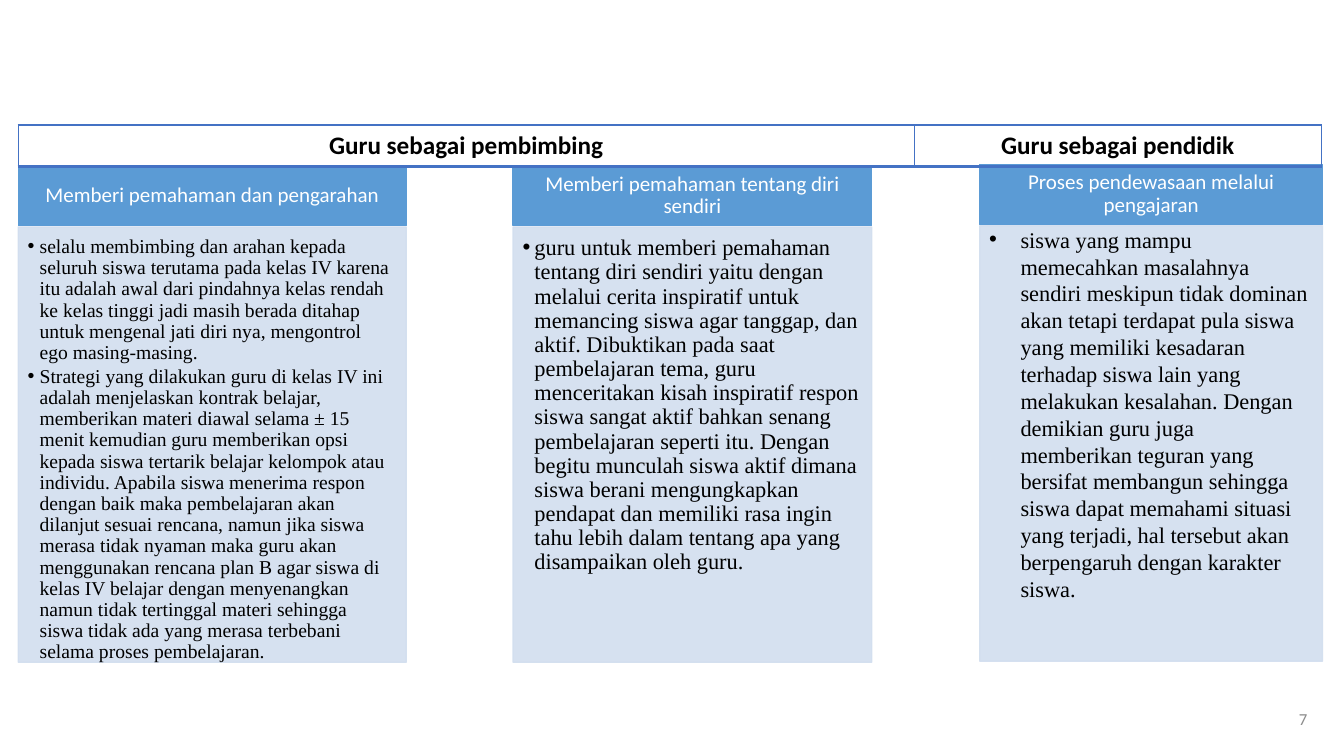
from lxml import etree
from pptx import Presentation
from pptx.dml.color import RGBColor
from pptx.enum.shapes import MSO_SHAPE
from pptx.enum.text import MSO_ANCHOR, PP_ALIGN
from pptx.oxml.ns import qn
from pptx.util import Cm, Pt

BLUE, PALE, BORDER = "5B9BD5", "D2DEEF", "4472C4"
HEADER_H, BODY_H = 1.52, 10.97

TABLE_HEADS = [("Guru sebagai pembimbing", 22.58), ("Guru sebagai pendidik", 10.26)]

# left, width, header top, heading, body size, indent, line spacing, top inset, items
COLUMNS = [
    (0.46, 9.78, 4.17, "Memberi pemahaman dan pengarahan", 14, 0.3, 0.9, 0.24, [
        "selalu membimbing dan arahan kepada seluruh siswa terutama pada kelas IV "
        "karena itu adalah awal dari pindahnya kelas rendah ke kelas tinggi jadi masih "
        "berada ditahap untuk mengenal jati diri nya, mengontrol ego masing-masing.",
        "Strategi yang dilakukan guru di kelas IV ini adalah menjelaskan kontrak "
        "belajar, memberikan materi diawal selama ± 15 menit kemudian guru memberikan "
        "opsi kepada siswa tertarik belajar kelompok atau individu. Apabila siswa "
        "menerima respon dengan baik maka pembelajaran akan dilanjut sesuai rencana, "
        "namun jika siswa merasa tidak nyaman maka guru akan menggunakan rencana plan B "
        "agar siswa di kelas IV belajar dengan menyenangkan namun tidak tertinggal "
        "materi sehingga siswa tidak ada yang merasa terbebani selama proses "
        "pembelajaran.",
    ]),
    (12.93, 9.04, 4.17, "Memberi pemahaman tentang diri sendiri", 16, 0.3, 0.9, 0.24, [
        "guru untuk memberi pemahaman tentang diri sendiri yaitu dengan melalui cerita "
        "inspiratif untuk memancing siswa agar tanggap, dan aktif. Dibuktikan pada saat "
        "pembelajaran tema, guru menceritakan kisah inspiratif respon siswa sangat aktif "
        "bahkan senang pembelajaran seperti itu. Dengan begitu munculah siswa aktif "
        "dimana siswa berani mengungkapkan pendapat dan memiliki rasa ingin tahu lebih "
        "dalam tentang apa yang disampaikan oleh guru.",
    ]),
    (24.69, 8.64, 4.14, "Proses pendewasaan melalui pengajaran", 16, 0.79, 1.0, 0, [
        "siswa yang mampu memecahkan masalahnya sendiri meskipun tidak dominan akan "
        "tetapi terdapat pula siswa yang memiliki kesadaran terhadap siswa lain yang "
        "melakukan kesalahan. Dengan demikian guru juga memberikan teguran yang bersifat "
        "membangun sehingga siswa dapat memahami situasi yang terjadi, hal tersebut akan "
        "berpengaruh dengan karakter siswa.",
    ]),
]


def rgb(color):
    return RGBColor.from_string(color)


def style_text(p, size, color, font="Calibri", bold=False):
    for r in p.runs:
        r.font.size, r.font.name, r.font.bold = Pt(size), font, bold
        r.font.color.rgb = rgb(color)


def add_box(s, left, top, width, height, color, insets):
    sp = s.shapes.add_shape(MSO_SHAPE.RECTANGLE, Cm(left), Cm(top), Cm(width), Cm(height))
    sp.shadow.inherit = False
    sp.fill.solid()
    sp.fill.fore_color.rgb = rgb(color)
    sp.line.color.rgb = rgb(color)
    sp.line.width = Pt(1)
    tf = sp.text_frame
    tf.word_wrap = True
    tf.margin_left, tf.margin_top, tf.margin_right, tf.margin_bottom = map(Cm, insets)
    return sp


def set_alpha(sp, percent):
    for clr in sp._element.spPr.iter(qn("a:srgbClr")):
        etree.SubElement(clr, qn("a:alpha")).set("val", str(percent * 1000))


def set_bullet(p, indent):
    pPr = p._p.get_or_add_pPr()
    pPr.set("marL", str(Cm(indent)))
    pPr.set("indent", str(-Cm(indent)))
    etree.SubElement(pPr, qn("a:buFont")).set("typeface", "Arial")
    etree.SubElement(pPr, qn("a:buChar")).set("char", "•")


def add_header(s, left, top, width, text):
    sp = add_box(s, left, top, width, HEADER_H, BLUE, (0.3, 0.18, 0.3, 0.18))
    tf = sp.text_frame
    tf.vertical_anchor = MSO_ANCHOR.MIDDLE
    tf.text = text
    p = tf.paragraphs[0]
    p.alignment, p.line_spacing = PP_ALIGN.CENTER, 0.9
    style_text(p, 15, "FFFFFF")


def add_body(s, left, top, width, size, indent, spacing, inset_top, items):
    sp = add_box(s, left, top, width, BODY_H, PALE, (0.24, inset_top, 0.3, 0.32))
    set_alpha(sp, 90)
    tf = sp.text_frame
    tf.vertical_anchor = MSO_ANCHOR.TOP
    for i, item in enumerate(items):
        p = tf.add_paragraph() if i else tf.paragraphs[0]
        p.text = item
        set_bullet(p, indent)
        p.alignment, p.line_spacing, p.space_after = PP_ALIGN.LEFT, spacing, Pt(2)
        style_text(p, size, "000000", "Times New Roman")


def set_borders(cell):
    tcPr = cell._tc.get_or_add_tcPr()
    for i, (side, width) in enumerate([("L", 1), ("R", 1), ("T", 1), ("B", 2)]):
        ln = etree.Element(qn(f"a:ln{side}"), w=str(Pt(width)))
        fill = etree.SubElement(ln, qn("a:solidFill"))
        etree.SubElement(fill, qn("a:srgbClr")).set("val", BORDER)
        tcPr.insert(i, ln)


def add_role_table(s, left, top, height):
    width = sum(w for _, w in TABLE_HEADS)
    table = s.shapes.add_table(1, len(TABLE_HEADS), Cm(left), Cm(top),
                               Cm(width), Cm(height)).table
    table.first_row = table.horz_banding = False
    for i, (text, col_width) in enumerate(TABLE_HEADS):
        table.columns[i].width = Cm(col_width)
        cell = table.cell(0, i)
        cell.fill.background()
        set_borders(cell)
        cell.text = text
        p = cell.text_frame.paragraphs[0]
        p.alignment = PP_ALIGN.CENTER
        style_text(p, 18, "000000", bold=True)


def add_page_number(s, text):
    tf = s.shapes.add_textbox(Cm(31.75), Cm(17.6), Cm(1.45), Cm(1.02)).text_frame
    tf.word_wrap = True
    tf.vertical_anchor = MSO_ANCHOR.MIDDLE
    tf.text = text
    p = tf.paragraphs[0]
    p.alignment = PP_ALIGN.RIGHT
    style_text(p, 12, "8C8C8C")


def main():
    prs = Presentation()
    prs.slide_width, prs.slide_height = Cm(33.87), Cm(19.05)
    s = prs.slides.add_slide(prs.slide_layouts[6])

    add_page_number(s, "7")

    # Three columns: pale body below a blue header
    for left, width, top, heading, *body in COLUMNS:
        add_body(s, left, top + HEADER_H + 0.03, width, *body)
        add_header(s, left, top, width, heading)

    # Teacher roles above the columns
    add_role_table(s, 0.46, 3.15, 1.04)

    prs.save("out.pptx")


if __name__ == "__main__":
    main()
